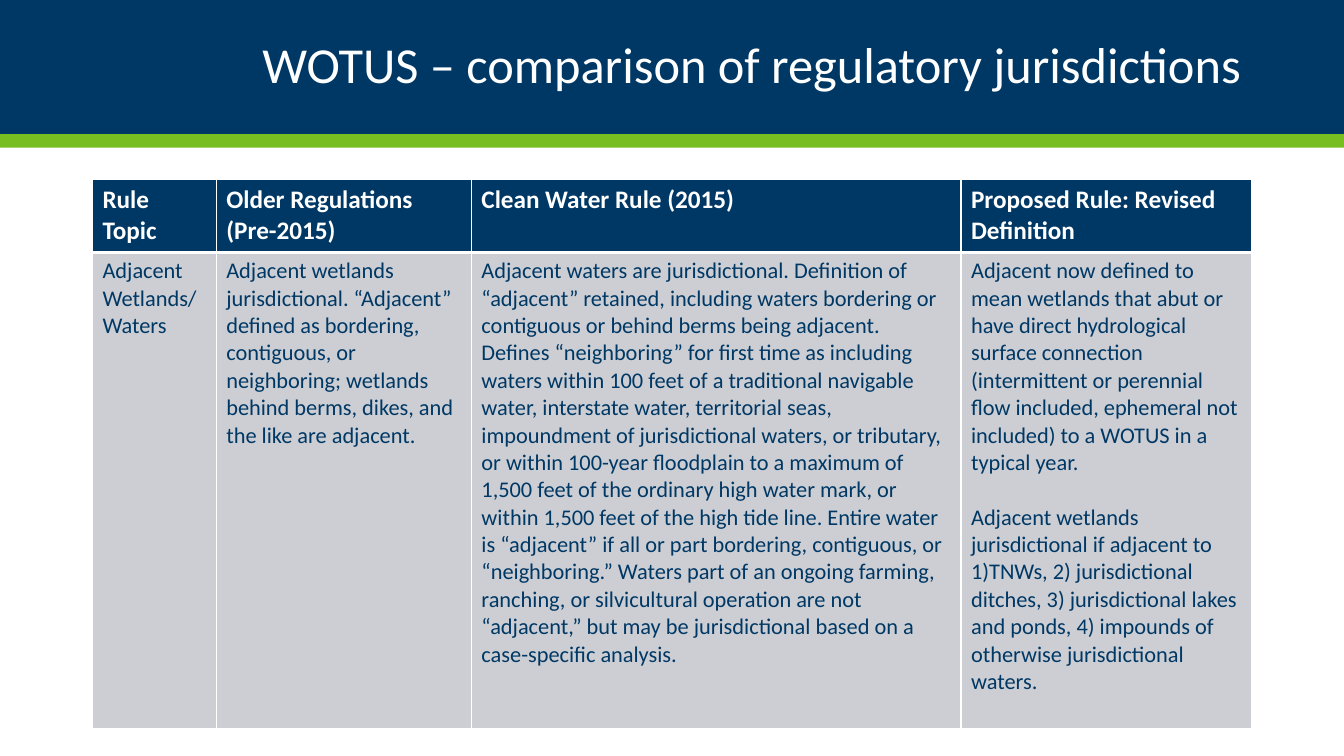
from pptx import Presentation
from pptx.dml.color import RGBColor
from pptx.enum.shapes import MSO_SHAPE as Shape
from pptx.enum.text import MSO_ANCHOR as Anchor, MSO_AUTO_SIZE as AutoSize, PP_ALIGN as Align
from pptx.oxml.ns import qn
from pptx.util import Cm, Pt
from lxml.etree import SubElement

COLORS = {"navy": "003865", "green": "78BE21", "grey": "CCCED3", "white": "FFFFFF"}
FONT = "Calibri"
PAGE_WIDTH, PAGE_HEIGHT = 33.87, 19.05
TITLE_ONLY = 5

COLUMN_WIDTHS = [3.12, 6.43, 12.34, 7.32]
ROW_HEIGHTS = [1.83, 11.99]
HEADERS = [
    "Rule Topic",
    "Older Regulations (Pre-2015)",
    "Clean Water Rule (2015)",
    "Proposed Rule: Revised Definition",
]
# Each body cell is a list of paragraphs
BODY = [
    ["Adjacent Wetlands/Waters"],
    ["Adjacent wetlands jurisdictional. “Adjacent” defined as bordering, contiguous, or "
     "neighboring; wetlands behind berms, dikes, and the like are adjacent."],
    ["Adjacent waters are jurisdictional. Definition of “adjacent” retained, including waters "
     "bordering or contiguous or behind berms being adjacent. Defines “neighboring” for first "
     "time as including waters within 100 feet of a traditional navigable water, interstate "
     "water, territorial seas, impoundment of jurisdictional waters, or tributary, or within "
     "100-year floodplain to a maximum of 1,500 feet of the ordinary high water mark, or within "
     "1,500 feet of the high tide line. Entire water is “adjacent” if all or part bordering, "
     "contiguous, or “neighboring.” Waters part of an ongoing farming, ranching, or "
     "silvicultural operation are not “adjacent,” but may be jurisdictional based on a "
     "case-specific analysis."],
    ["Adjacent now defined to mean wetlands that abut or have direct hydrological surface "
     "connection (intermittent or perennial flow included, ephemeral not included) to a WOTUS "
     "in a typical year.",
     "Adjacent wetlands jurisdictional if adjacent to 1)TNWs, 2) jurisdictional ditches, "
     "3) jurisdictional lakes and ponds, 4) impounds of otherwise jurisdictional waters."],
]


def color(name):
    return RGBColor.from_string(COLORS[name])


def style_font(para, size, color_name, bold=False):
    para.font.name = FONT
    para.font.size = Pt(size)
    para.font.bold = bold
    para.font.color.rgb = color(color_name)


def add_band(page, left, top, width, height, color_name):
    band = page.shapes.add_shape(Shape.RECTANGLE, Cm(left), Cm(top), Cm(width), Cm(height))
    band.shadow.inherit = False
    band.fill.solid()
    band.fill.fore_color.rgb = color(color_name)
    band.line.fill.background()


def add_header(page, left, top, width, height, text):
    # Navy band with a green strip a tenth as high below it
    strip = height / 11
    add_band(page, left, top, width, height - strip, "navy")
    add_band(page, left, top + height - strip, width, strip, "green")

    # Title, brought in front of the bands
    title = page.shapes.title
    page.shapes._spTree.append(title._element)
    title.left, title.top = Cm(left + 2.33), Cm(top + 0.42)
    title.width, title.height = Cm(width - 4.66), Cm(2.54)
    frame = title.text_frame
    frame.text = text
    frame.auto_size = AutoSize.NONE
    frame.word_wrap = True
    frame.vertical_anchor = Anchor.MIDDLE
    para = frame.paragraphs[0]
    para.alignment = Align.RIGHT
    para.line_spacing = 0.9
    style_font(para, 36, "white")


def set_borders(cell, top, bottom):
    properties = cell._tc.get_or_add_tcPr()
    for side, points in (("L", 1), ("R", 1), ("T", top), ("B", bottom)):
        line = SubElement(properties, qn(f"a:ln{side}"), w=str(Pt(points)))
        SubElement(SubElement(line, qn("a:solidFill")), qn("a:srgbClr"), val=COLORS["white"])


def fill_cell(cell, paragraphs, is_header):
    # Borders come before the fill in the cell properties
    set_borders(cell, *((1, 3) if is_header else (3, 1)))
    cell.fill.solid()
    cell.fill.fore_color.rgb = color("navy" if is_header else "grey")
    cell.text = "\n".join(paragraphs)
    for index, para in enumerate(cell.text_frame.paragraphs):
        if is_header:
            style_font(para, 18, "white", bold=True)
        else:
            style_font(para, 16, "navy")
        if index:
            para.space_before = Pt(19.5)


def add_comparison(page, left, top, width, height):
    table = page.shapes.add_table(
        2, len(HEADERS), Cm(left), Cm(top), Cm(width), Cm(height)).table
    table.horz_banding = False
    for column, share in zip(table.columns, COLUMN_WIDTHS):
        column.width = Cm(width * share / sum(COLUMN_WIDTHS))
    for row, share in zip(table.rows, ROW_HEIGHTS):
        row.height = Cm(height * share / sum(ROW_HEIGHTS))
    for index, (header, paragraphs) in enumerate(zip(HEADERS, BODY)):
        fill_cell(table.cell(0, index), [header], True)
        fill_cell(table.cell(1, index), paragraphs, False)


def main():
    deck = Presentation()
    deck.slide_width, deck.slide_height = Cm(PAGE_WIDTH), Cm(PAGE_HEIGHT)
    page = deck.slides.add_slide(deck.slide_layouts[TITLE_ONLY])
    add_header(page, 0, 0, PAGE_WIDTH, 3.72, "WOTUS – comparison of regulatory jurisdictions")
    add_comparison(page, 2.33, 4.53, sum(COLUMN_WIDTHS), sum(ROW_HEIGHTS))
    deck.save("out.pptx")


if __name__ == "__main__":
    main()
